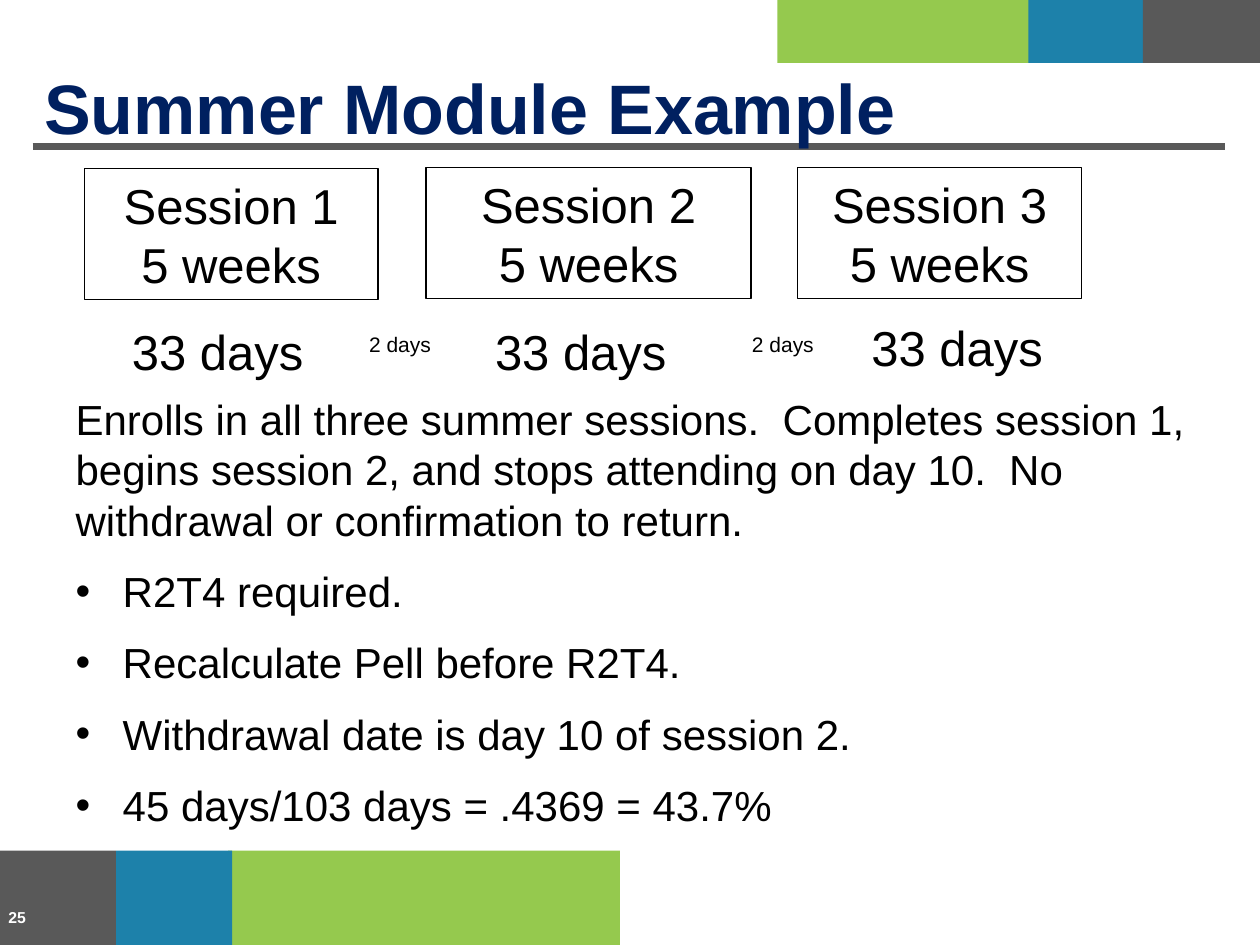
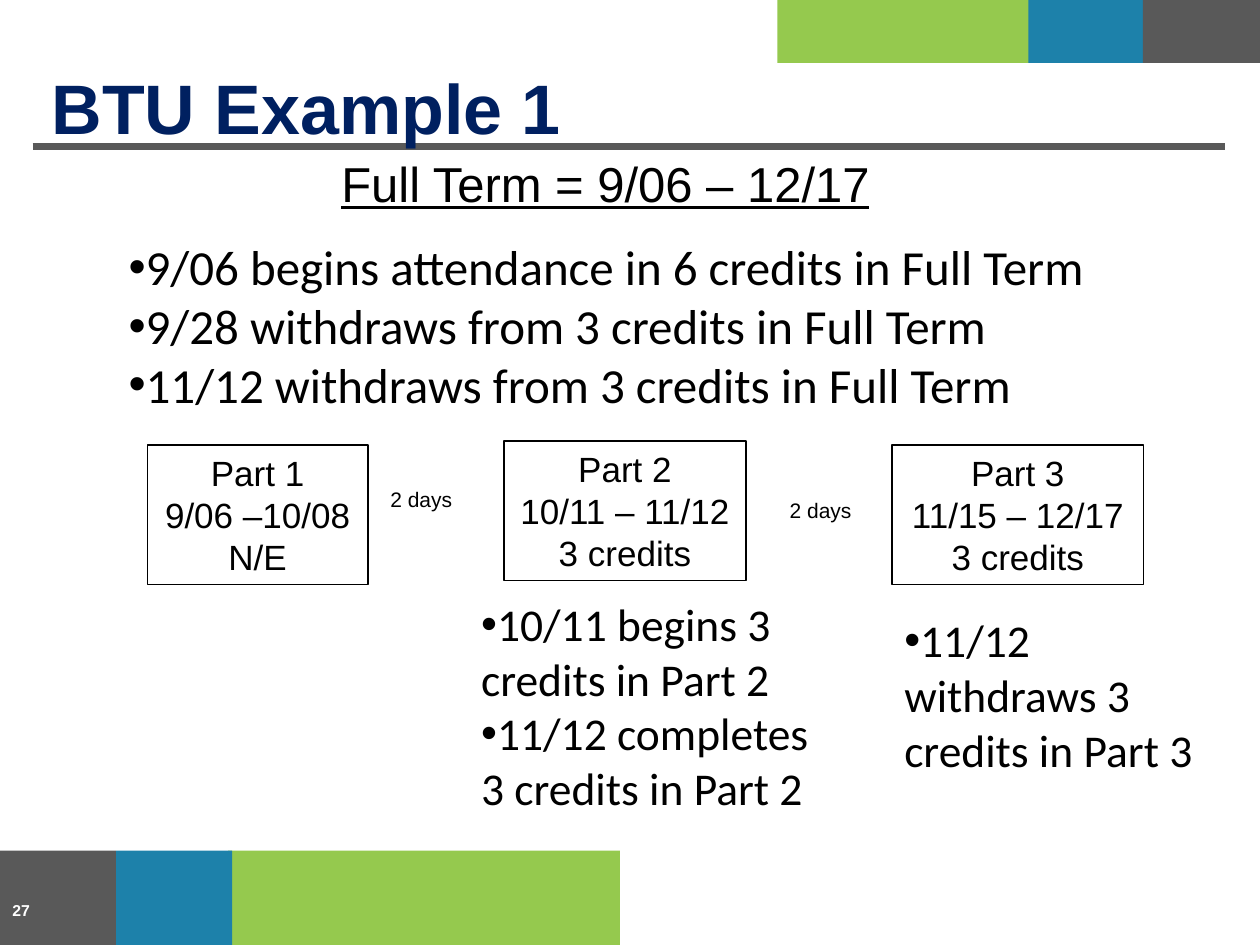
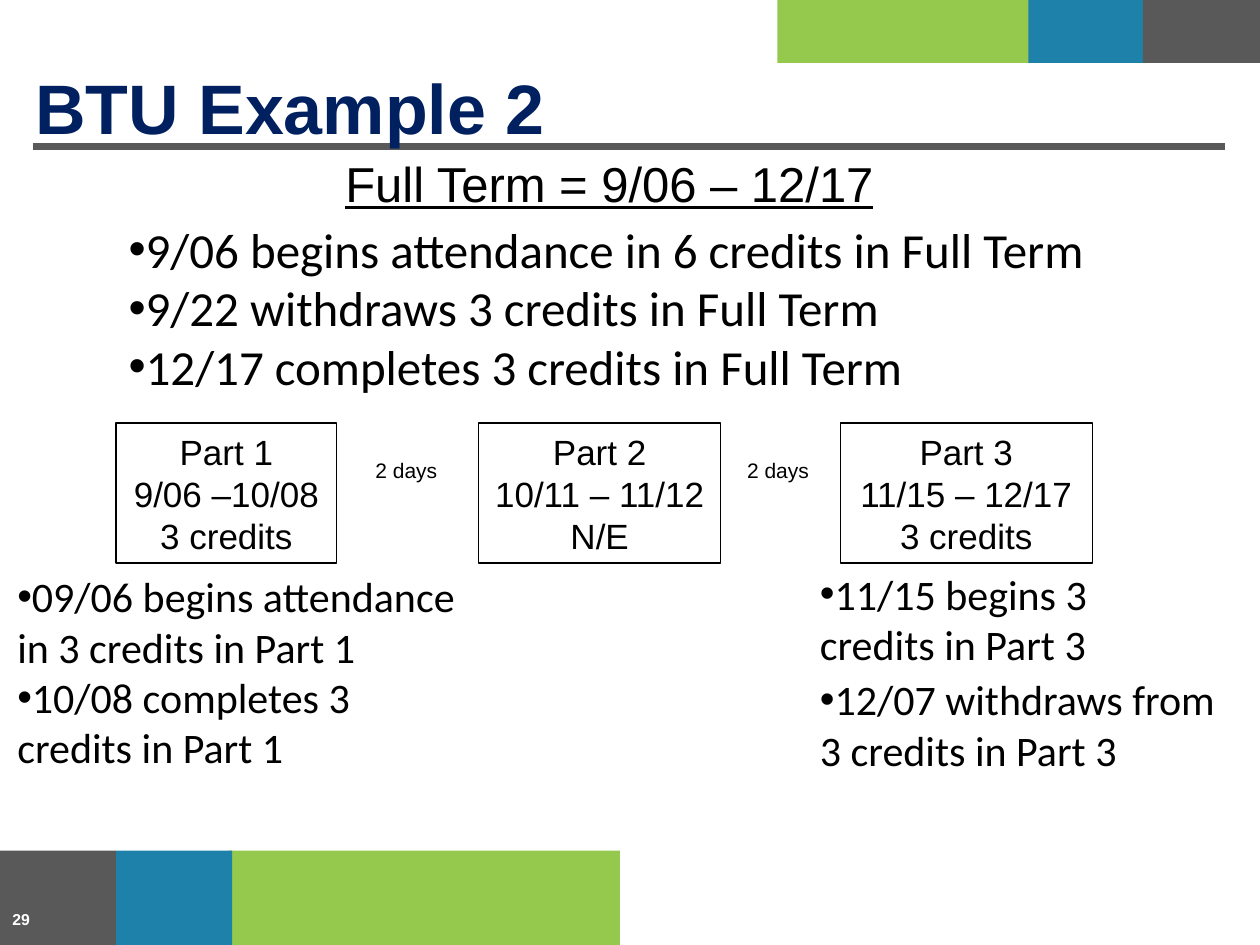
from dataclasses import dataclass
from typing import NamedTuple, Optional

from lxml import etree
from pptx import Presentation, util as u
from pptx.dml.color import RGBColor
from pptx.enum import shapes, text
from pptx.oxml import ns

BLACK, WHITE, NAVY = "000000", "FFFFFF", "002060"
GREEN, BLUE, GRAY = "95C94E", "1D81AA", "595959"
LEFT, CENTER = text.PP_ALIGN.LEFT, text.PP_ALIGN.CENTER


class Box(NamedTuple):
    left: float
    top: float
    width: float
    height: float

    def lengths(self) -> list:
        return [u.Cm(value) for value in self]


class Band(NamedTuple):
    box: Box
    color: str


@dataclass(frozen=True)
class Style:
    size: int
    name: str = "Arial"
    color: str = BLACK
    bold: bool = False
    underline: bool = False
    align: text.PP_ALIGN = LEFT
    bullet: bool = False
    hanging: float = 0
    before: float = 0


@dataclass(frozen=True)
class Label:
    box: Box
    lines: tuple
    style: Style
    anchor: text.MSO_ANCHOR = text.MSO_ANCHOR.TOP
    framed: bool = False


@dataclass(frozen=True)
class Page:
    title: str
    title_left: float
    number: str
    number_left: float
    number_top: float
    body: Box
    body_lines: tuple
    body_style: Style
    labels: tuple
    intro: Optional[str] = None


TITLE = Style(40, color=NAVY, bold=True)
NUMBER = Style(9, color=WHITE, bold=True)
SESSION = Style(28, align=CENTER)
PART = Style(20, align=CENTER)
DAYS = Style(28)
GAP = Style(12)
TERM = Style(28, underline=True, align=CENTER)
INTRO = Style(24)
ANSWER = Style(24, bullet=True, hanging=0.95, before=12)
CREDITS = Style(28, "Calibri", bullet=True)
NOTE_26 = Style(26, "Calibri", bullet=True)
NOTE_24 = Style(24, "Calibri", bullet=True)

BANDS = (
    Band(Box(4.6, 17.15, 7.9, 1.96), GREEN),
    Band(Box(2.34, 17.15, 2.34, 1.96), BLUE),
    Band(Box(-0.05, 17.15, 2.39, 1.96), GRAY),
    Band(Box(15.67, 0, 5.13, 1.27), GREEN),
    Band(Box(20.73, 0, 2.34, 1.27), BLUE),
    Band(Box(23.04, 0, 2.39, 1.27), GRAY),
)


def rgb(color: str) -> RGBColor:
    return RGBColor.from_string(color)


def set_bullet(paragraph, style: Style) -> None:
    properties = paragraph._p.get_or_add_pPr()
    properties.set("marL", str(u.Cm(style.hanging)))
    properties.set("indent", str(-u.Cm(style.hanging)))
    if style.bullet:
        etree.SubElement(properties, ns.qn("a:buFont"), typeface="Arial")
        etree.SubElement(properties, ns.qn("a:buChar"), char="•")
    else:
        etree.SubElement(properties, ns.qn("a:buNone"))


def write_paragraph(paragraph, line: str, style: Style, first: bool) -> None:
    paragraph.text = line
    set_bullet(paragraph, style)
    paragraph.alignment = style.align
    paragraph.line_spacing = u.Pt(1.2 * style.size)
    paragraph.space_before = u.Pt(0 if first else style.before)
    font = paragraph.font
    font.name, font.size = style.name, u.Pt(style.size)
    font.bold, font.underline = style.bold, style.underline
    font.color.rgb = rgb(style.color)


def write(shape, lines: tuple, style: Style, anchor=text.MSO_ANCHOR.TOP,
          intro: Optional[str] = None) -> None:
    frame = shape.text_frame
    frame.word_wrap = True
    frame.auto_size = text.MSO_AUTO_SIZE.NONE
    frame.vertical_anchor = anchor
    entries = [(line, style) for line in lines]
    if intro:
        entries.insert(0, (intro, INTRO))
    for index, (line, line_style) in enumerate(entries):
        paragraph = frame.add_paragraph() if index else frame.paragraphs[0]
        write_paragraph(paragraph, line, line_style, index == 0)


def place(shape, box: Box) -> None:
    shape.left, shape.top, shape.width, shape.height = box.lengths()


def add_rectangle(slide, box: Box):
    shape = slide.shapes.add_shape(shapes.MSO_SHAPE.RECTANGLE, *box.lengths())
    shape.shadow.inherit = False
    return shape


def add_label(slide, label: Label) -> None:
    if label.framed:
        shape = add_rectangle(slide, label.box)
        shape.fill.background()
        shape.line.color.rgb = rgb(BLACK)
        shape.line.width = u.Pt(0.75)
    else:
        shape = slide.shapes.add_textbox(*label.box.lengths())
    write(shape, label.lines, label.style, label.anchor)


def decorate_master(presentation, slide) -> None:
    decorations = []
    for band in BANDS:
        shape = add_rectangle(slide, band.box)
        shape.fill.solid()
        shape.fill.fore_color.rgb = rgb(band.color)
        shape.line.fill.background()
        decorations.append(shape)
    rule = slide.shapes.add_connector(
        shapes.MSO_CONNECTOR.STRAIGHT, u.Cm(0.66), u.Cm(2.95), u.Cm(24.69), u.Cm(2.95))
    rule.line.color.rgb = rgb(GRAY)
    rule.line.width = u.Pt(4)
    etree.SubElement(rule.element.spPr, ns.qn("a:effectLst"))
    decorations.append(rule)
    first_placeholder = presentation.slide_master.placeholders[0].element
    for shape in decorations:
        first_placeholder.addprevious(shape.element)


def framed(left: float, top: float, width: float, height: float,
           style: Style, *lines: str) -> Label:
    return Label(Box(left, top, width, height), lines, style,
                 text.MSO_ANCHOR.MIDDLE, framed=True)


def session(number: int, left: float, top: float, width: float) -> Label:
    return framed(left, top, width, 2.64, SESSION, f"Session {number}", "5 weeks")


def part(number: int, left: float, top: float, width: float, *lines: str) -> Label:
    return framed(left, top, width, 2.82, PART, f"Part {number}", *lines)


def days(left: float, top: float, width: float, style: Style = DAYS) -> Label:
    return Label(Box(left, top, width, 1.45), ("33 days",), style)


def gap(left: float, top: float, width: float) -> Label:
    return Label(Box(left, top, width, 0.76), ("2 days",), GAP)


def full_term(left: float) -> Label:
    return Label(Box(left, 2.97, 19.89, 2.64), ("Full Term = 9/06 – 12/17",), TERM)


PAGES = (
    Page(
        "Summer Module Example", 0.64, "25", -0.08, 17.98,
        Box(1.27, 7.8, 24.13, 9.5),
        ("R2T4 required.", "Recalculate Pell before R2T4.",
         "Withdrawal date is day 10 of session 2.",
         "45 days/103 days = .4369 = 43.7%"),
        ANSWER,
        (session(1, 1.7, 3.4, 5.92), session(2, 8.59, 3.38, 6.55),
         session(3, 16.08, 3.38, 5.72),
         days(2.41, 6.35, 4.24), days(9.73, 6.35, 5.08),
         days(16.54, 6.27, 5.51, SESSION),
         gap(7.19, 6.55, 1.9), gap(14.91, 6.55, 1.9)),
        "Enrolls in all three summer sessions.  Completes session 1, begins session 2, "
        "and stops attending on day 10.  No withdrawal or confirmation to return.",
    ),
    Page(
        "BTU Example 1", 0.79, "27", 0, 17.83,
        Box(2.34, 4.65, 21.39, 3.84),
        ("9/06 begins attendance in 6 credits in Full Term",
         "9/28 withdraws from 3 credits in Full Term",
         "11/12 withdraws from 3 credits in Full Term"),
        CREDITS,
        (full_term(2.26),
         part(1, 2.97, 8.97, 4.45, "9/06 –10/08", "N/E"),
         part(2, 10.16, 8.89, 4.88, "10/11 – 11/12", "3 credits"),
         part(3, 17.98, 8.97, 5.08, "11/15 – 12/17", "3 credits"),
         gap(7.62, 9.68, 2.11), gap(15.67, 9.91, 2.11),
         Label(Box(9.45, 11.89, 8.26, 4.7),
               ("10/11 begins 3 credits in Part 2",
                "11/12 completes\v3 credits in Part 2"), NOTE_26),
         Label(Box(17.98, 12.22, 6.58, 3.58),
               ("11/12 withdraws 3 credits in Part 3",), NOTE_26)),
    ),
    Page(
        "BTU Example 2", 0.46, "29", 0, 18.03,
        Box(2.34, 4.29, 21.16, 5.05),
        ("9/06 begins attendance in 6 credits in Full Term",
         "9/22 withdraws 3 credits in Full Term",
         "12/17 completes 3 credits in Full Term"),
        CREDITS,
        (full_term(2.34),
         part(1, 2.34, 8.53, 4.45, "9/06 –10/08 3 credits"),
         part(2, 9.65, 8.53, 4.88, "10/11 – 11/12", "N/E"),
         part(3, 16.94, 8.53, 5.08, "11/15 – 12/17", "3 credits"),
         gap(7.32, 9.09, 1.9), gap(14.81, 9.09, 2.11),
         Label(Box(0.1, 11.38, 9.53, 4.37),
               ("09/06 begins attendance in 3 credits in Part 1",
                "10/08 completes 3 credits in Part 1"), NOTE_24),
         Label(Box(16.28, 11.33, 8.03, 2.31),
               ("11/15 begins 3 credits in Part 3",), NOTE_24),
         Label(Box(16.28, 13.46, 8.48, 2.31),
               ("12/07 withdraws from 3 credits in Part 3",), NOTE_24)),
    ),
)


def fill_slide(slide, page: Page) -> None:
    title, body = slide.placeholders
    place(title, Box(page.title_left, 1.14, 23.75, 1.85))
    write(title, (page.title,), TITLE, text.MSO_ANCHOR.BOTTOM)
    title.text_frame.margin_bottom = 0
    place(body, page.body)
    write(body, page.body_lines, page.body_style, intro=page.intro)
    for label in page.labels:
        add_label(slide, label)
    number_box = Box(page.number_left, page.number_top, 5.92, 1.02)
    add_label(slide, Label(number_box, (page.number,), NUMBER, text.MSO_ANCHOR.MIDDLE))


def main() -> None:
    presentation = Presentation()
    presentation.slide_width, presentation.slide_height = u.Cm(25.4), u.Cm(19.05)
    layout = presentation.slide_layouts[1]
    slides = [presentation.slides.add_slide(layout) for _ in PAGES]
    decorate_master(presentation, slides[0])
    for slide, page in zip(slides, PAGES):
        fill_slide(slide, page)
    presentation.save("out.pptx")


if __name__ == "__main__":
    main()
